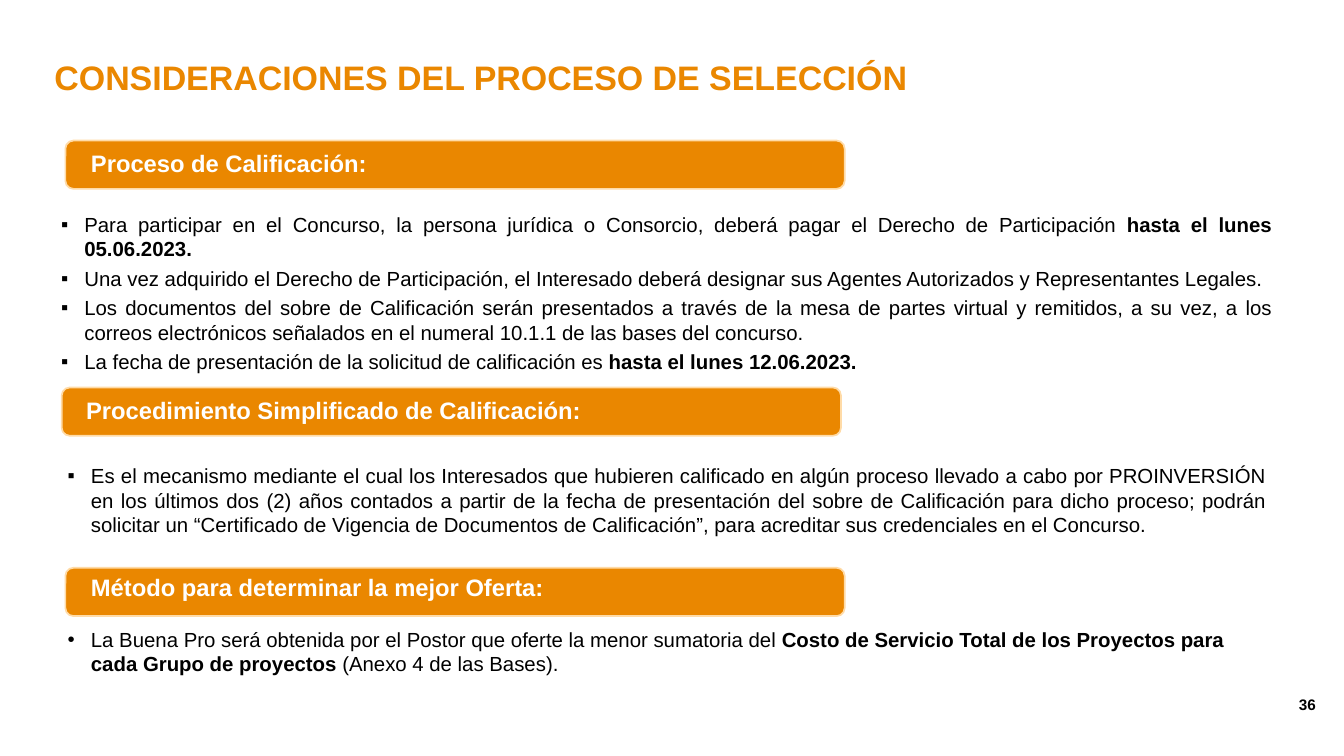
from lxml import etree
from pptx import Presentation
from pptx import util as u
from pptx.dml.color import RGBColor
from pptx.enum import shapes, text
from pptx.oxml.ns import qn

COLORS = {"orange": "EA8700", "edge": "FFDBA7", "white": "FFFFFF", "black": "000000"}
FONT = "Arial"
LEFT, RIGHT, JUST = text.PP_ALIGN.LEFT, text.PP_ALIGN.RIGHT, text.PP_ALIGN.JUSTIFY

TITLE = "CONSIDERACIONES DEL PROCESO DE SELECCIÓN"
PAGE = "36"

# Heading, left, top, text inset from the left and from the top
BANDS = [
    ("Proceso de Calificación:", 1.07, 2.3, 0.38, 0.1),
    ("Procedimiento Simplificado de Calificación:", 1.01, 6.34, 0.36, 0.1),
    ("Método para determinar la mejor Oferta:", 1.07, 9.29, 0.38, 0.04),
]

# Each item is an alignment and its runs; every second run is bold
STEPS = [
    (JUST, ["Para participar en el Concurso, la persona jurídica o Consorcio, deberá pagar "
            "el Derecho de Participación ", "hasta el lunes 05.06.2023."]),
    (JUST, ["Una vez adquirido el Derecho de Participación, el Interesado deberá designar "
            "sus Agentes Autorizados y Representantes Legales."]),
    (JUST, ["Los documentos del sobre de Calificación serán presentados a través de la mesa "
            "de partes virtual y remitidos, a su vez, a los correos electrónicos señalados "
            "en el numeral 10.1.1 de las bases del concurso."]),
    (LEFT, ["La fecha de presentación de la solicitud de calificación es ",
            "hasta el lunes 12.06.2023."]),
]
SHORT = [
    (JUST, ["Es el mecanismo mediante el cual los Interesados que hubieren calificado en "
            "algún proceso llevado a cabo por PROINVERSIÓN en los últimos dos (2) años "
            "contados a partir de la fecha de presentación del sobre de Calificación para "
            "dicho proceso; podrán solicitar un “Certificado de Vigencia de Documentos de "
            "Calificación”, para acreditar sus credenciales en el Concurso."]),
]
OFFER = [
    (LEFT, ["La Buena Pro será obtenida por el Postor que oferte la menor sumatoria del ",
            "Costo de Servicio Total de los Proyectos para cada Grupo de proyectos ",
            "(Anexo 4 de las Bases)."]),
]


def tint(name):
    return RGBColor.from_string(COLORS[name])


def place(shape, *box):
    shape.left, shape.top, shape.width, shape.height = map(u.Inches, box)
    return shape


def write(shape, items, size=24, color="black", bold=False, mark=None, after=0,
          inset=(0.1, 0.05)):
    frame = shape.text_frame
    frame.word_wrap = True
    frame.auto_size = text.MSO_AUTO_SIZE.NONE
    frame.vertical_anchor = text.MSO_ANCHOR.TOP
    frame.margin_left, frame.margin_top = map(u.Inches, inset)
    for i, (align, runs) in enumerate(items):
        para = frame.paragraphs[0] if i == 0 else frame.add_paragraph()
        para.alignment = align
        para.space_before, para.space_after = u.Pt(0), u.Pt(after)
        if mark:
            props = para._p.get_or_add_pPr()
            props.set("marL", str(u.Inches(0.38)))
            props.set("indent", str(-u.Inches(0.38)))
            etree.SubElement(props, qn("a:buFont"), typeface=FONT)
            etree.SubElement(props, qn("a:buChar"), char=mark)
        for j, words in enumerate(runs):
            run = para.add_run()
            run.text = words
            run.font.name, run.font.size = FONT, u.Pt(size)
            run.font.bold = bold or j % 2 == 1
            run.font.color.rgb = tint(color)


deck = Presentation()
deck.slide_width, deck.slide_height = u.Inches(21.99), u.Inches(12.37)
slide = deck.slides.add_slide(deck.slide_layouts[1])
parts = slide.shapes

# Title
title = place(parts.title, 0.79, 0.87, 14.3, 0.77)
write(title, [(LEFT, [TITLE])], size=40, color="orange", bold=True)

# Heading bands
for head, left, top, dx, dy in BANDS:
    band = parts.add_shape(shapes.MSO_SHAPE.ROUNDED_RECTANGLE,
                           *map(u.Inches, (left, top, 12.75, 0.79)))
    band.shadow.inherit = False
    band.fill.solid()
    band.fill.fore_color.rgb = tint("orange")
    band.line.color.rgb = tint("edge")
    band.line.width = u.Pt(2)
    write(band, [(LEFT, [head])], size=28, color="white", bold=True, inset=(dx, dy))

# Lists
body = place(slide.placeholders[1], 0.9, 3.42, 20.01, 2.78)
write(body, STEPS, mark="▪", after=6)
for items, mark, top, height in [(SHORT, "▪", 7.53, 1.31), (OFFER, "•", 10.21, 0.91)]:
    note = parts.add_textbox(*map(u.Inches, (1.01, top, 19.8, height)))
    write(note, items, mark=mark)

# Page number
page = parts.add_textbox(*map(u.Inches, (19.98, 11.32, 1.65, 0.58)))
write(page, [(RIGHT, [PAGE])], size=18, bold=True)

deck.save("out.pptx")
